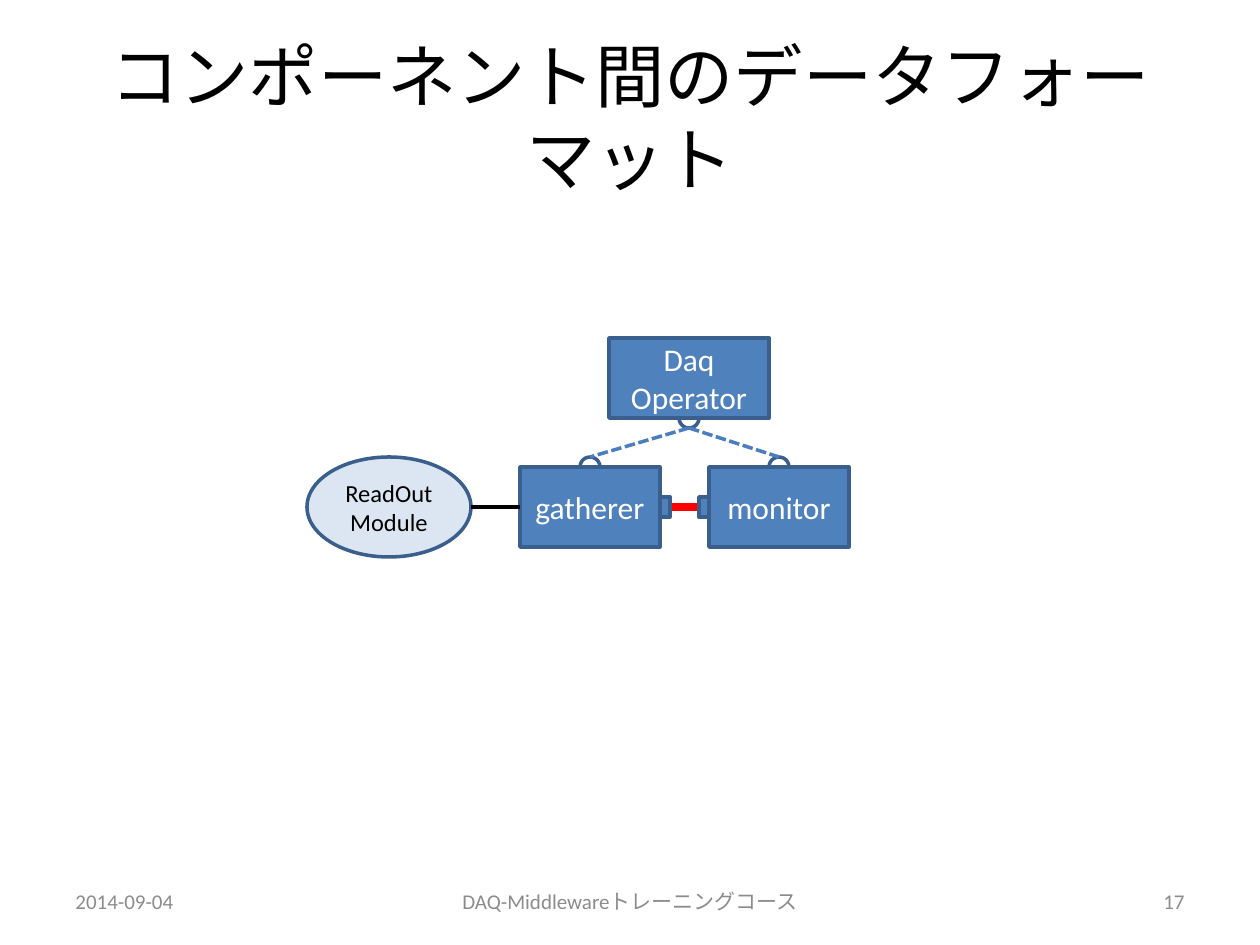
from lxml.etree import SubElement
from pptx import Presentation
from pptx.dml.color import RGBColor
from pptx.enum.dml import MSO_LINE
from pptx.enum.shapes import MSO_CONNECTOR, MSO_SHAPE
from pptx.enum.text import MSO_ANCHOR, PP_ALIGN
from pptx.oxml.ns import qn
from pptx.util import Emu, Pt

FONT = "Calibri"
BLUE = "4F81BD"
OUTLINE = "3A5F8C"
LINK_BLUE = "4B7EBC"
GREY = "8C8C8C"
PORT = 20
AXIS_Y = 507


def px(length):
    return Emu(round(length * 914400 / 126))


def color(value):
    return RGBColor.from_string(value)


def write(frame, text, size, ink, align):
    frame.text = text
    frame.word_wrap = True
    frame.vertical_anchor = MSO_ANCHOR.MIDDLE
    for paragraph in frame.paragraphs:
        paragraph.alignment = align
        for run in paragraph.runs:
            run.font.size = Pt(size)
            run.font.name = FONT
            run.font.color.rgb = color(ink)


def add_label(slide, box, text, size, ink, align):
    label = slide.shapes.add_textbox(*map(px, box))
    write(label.text_frame, text, size, ink, align)


def add_node(slide, kind, box, fill, text="", size=18, ink="FFFFFF"):
    node = slide.shapes.add_shape(kind, *map(px, box))
    node.shadow.inherit = False
    node.fill.solid()
    node.fill.fore_color.rgb = color(fill)
    node.line.color.rgb = color(OUTLINE)
    node.line.width = Pt(2)
    if text:
        write(node.text_frame, text, size, ink, PP_ALIGN.CENTER)
    return node


def add_link(slide, start, end, ink, width=2, dash=None):
    link = slide.shapes.add_connector(
        MSO_CONNECTOR.STRAIGHT, *map(px, start + end))
    link.line.color.rgb = color(ink)
    link.line.width = Pt(width)
    if dash:
        link.line.dash_style = dash
    SubElement(link._element.spPr, qn("a:effectLst"))
    return link


def main():
    deck = Presentation()
    deck.slide_width, deck.slide_height = px(1260), px(945)
    slide = deck.slides.add_slide(deck.slide_layouts[6])

    add_label(slide, (63, 38, 1134, 157), "コンポーネント間のデータフォーマット",
              39.6, "000000", PP_ALIGN.CENTER)
    for left, width, text, align in (
        (63, 294, "2014-09-04", PP_ALIGN.LEFT),
        (397, 466, "DAQ-Middlewareトレーニングコース", PP_ALIGN.CENTER),
        (903, 294, "17", PP_ALIGN.RIGHT),
    ):
        add_label(slide, (left, 876, width, 50), text, 12, GREY, align)

    operator_port = (689, 418)
    component_ports = ((590, 467), (779, 467))
    for x, y in (operator_port, *component_ports):
        add_node(slide, MSO_SHAPE.OVAL,
                 (x - PORT / 2, y - PORT / 2, PORT, PORT), "FFFFFF")

    gatherer = add_node(slide, MSO_SHAPE.RECTANGLE, (520, 467, 140, 80),
                        BLUE, "gatherer")
    monitor = add_node(slide, MSO_SHAPE.RECTANGLE, (709, 467, 140, 80),
                       BLUE, "monitor")
    add_node(slide, MSO_SHAPE.RECTANGLE, (609, 338, 160, 80),
             BLUE, "Daq Operator")
    add_node(slide, MSO_SHAPE.OVAL, (307, 457, 164, 100),
             "DCE6F2", "ReadOut\vModule", 14, "000000")

    readout_link = add_link(slide, (471, AXIS_Y), (520, AXIS_Y), "000000")
    readout_link.end_connect(gatherer, 1)
    data_link = add_link(slide, (660, AXIS_Y), (709, AXIS_Y), "FF0000", 5)
    data_link.begin_connect(gatherer, 3)
    data_link.end_connect(monitor, 1)
    for x, y in component_ports:
        add_link(slide, (operator_port[0], operator_port[1] + PORT / 2),
                 (x, y - PORT / 2), LINK_BLUE, dash=MSO_LINE.SQUARE_DOT)

    for left in (660, 699):
        add_node(slide, MSO_SHAPE.RECTANGLE,
                 (left, AXIS_Y - PORT / 2, PORT / 2, PORT), BLUE)

    deck.save("out.pptx")


if __name__ == "__main__":
    main()
